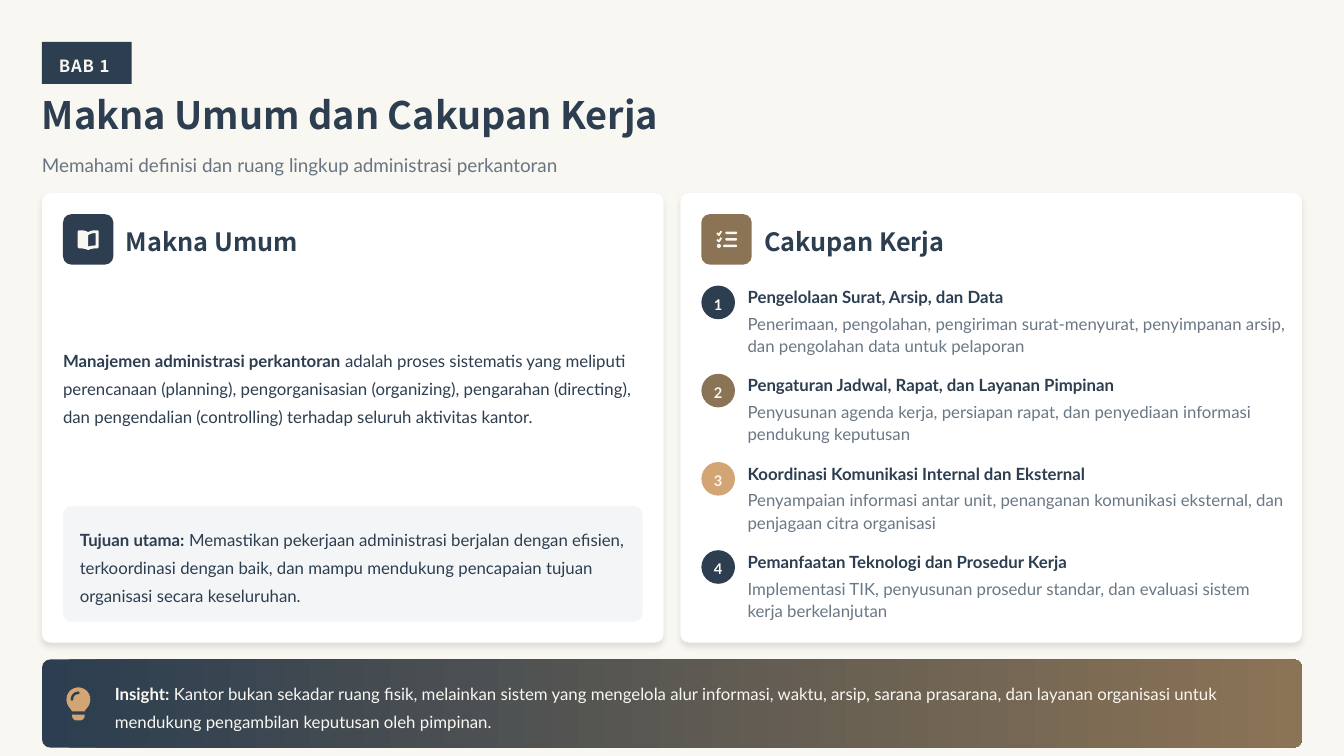
"""Build the slide on the general meaning and scope of office administration."""
from dataclasses import dataclass

from lxml import etree
from pptx import Presentation
from pptx.dml.color import RGBColor
from pptx.enum.shapes import MSO_SHAPE
from pptx.enum.text import MSO_ANCHOR, PP_ALIGN
from pptx.oxml.ns import qn
from pptx.util import Pt

RECT, ROUND, OVAL = MSO_SHAPE.RECTANGLE, MSO_SHAPE.ROUNDED_RECTANGLE, MSO_SHAPE.OVAL
MIDDLE, LEFT, CENTER = MSO_ANCHOR.MIDDLE, PP_ALIGN.LEFT, PP_ALIGN.CENTER


@dataclass(frozen=True)
class Theme:
    navy: str = "2C3E50"
    brown: str = "8B7355"
    tan: str = "D4A574"
    cream: str = "F8F7F2"
    white: str = "FFFFFF"
    head_font: str = "Noto Sans CJK SC"
    body_font: str = "Lato"
    title: float = 27
    heading: float = 18
    subtitle: float = 13.5
    body: float = 12
    badge: float = 10.5


T = Theme()

TAG = "BAB 1"
TITLE = "Makna Umum dan Cakupan Kerja"
SUBTITLE = "Memahami definisi dan ruang lingkup administrasi perkantoran"
MEANING = [
    ("Manajemen administrasi perkantoran", True),
    (" adalah proses sistematis yang meliputi perencanaan (planning), pengorganisasian (organizing), "
     "pengarahan (directing), dan pengendalian (controlling) terhadap seluruh aktivitas kantor.", False),
]
GOAL = [
    ("Tujuan utama:", True),
    (" Memastikan pekerjaan administrasi berjalan dengan efisien, terkoordinasi dengan baik, "
     "dan mampu mendukung pencapaian tujuan organisasi secara keseluruhan.", False),
]
INSIGHT = [
    ("Insight:", True),
    (" Kantor bukan sekadar ruang fisik, melainkan sistem yang mengelola alur informasi, waktu, arsip, "
     "sarana prasarana, dan layanan organisasi untuk mendukung pengambilan keputusan oleh pimpinan.", False),
]
SCOPE = [
    ("Pengelolaan Surat, Arsip, dan Data",
     "Penerimaan, pengolahan, pengiriman surat-menyurat, penyimpanan arsip, "
     "dan pengolahan data untuk pelaporan", T.navy),
    ("Pengaturan Jadwal, Rapat, dan Layanan Pimpinan",
     "Penyusunan agenda kerja, persiapan rapat, dan penyediaan informasi pendukung keputusan", T.brown),
    ("Koordinasi Komunikasi Internal dan Eksternal",
     "Penyampaian informasi antar unit, penanganan komunikasi eksternal, "
     "dan penjagaan citra organisasi", T.tan),
    ("Pemanfaatan Teknologi dan Prosedur Kerja",
     "Implementasi TIK, penyusunan prosedur standar, dan evaluasi sistem kerja berkelanjutan", T.navy),
]
BOOK = (
    "M 6.8 2 L 7.5 2.3 L 8.2 2 C 9.6 1.3 11.2 1 12.8 1 L 13.6 1 C 14.4 1 15 1.5 15 2.3 L 15 12.7 "
    "C 15 13.4 14.4 14 13.6 14 L 12.8 14 C 11 14 9.4 14.3 7.9 15 L 7.1 15 C 5.6 14.3 4 14 2.2 14 "
    "L 1.4 14 C 0.6 14 0 13.4 0 12.7 L 0 2.3 C 0 1.5 0.6 1 1.4 1 L 2.2 1 C 3.8 1 5.4 1.3 6.8 2 "
    "M 7.5 4.5 L 7.5 12.7 C 9.1 12.1 10.8 11.9 12.8 11.9 L 12.8 3 C 10.8 3 9 3.4 7.5 4.5"
)
CHECKLIST = (
    "M 3.2 1.3 L 4.3 2 L 2.4 5 L 1.7 5 L 0.2 3.5 L 1 2.5 L 1.9 3.3 L 3.2 1.3 "
    "M 3.2 6 L 4.3 6.7 L 2.4 9.7 L 1.7 9.7 L 0.2 8.2 L 1 7.2 L 1.9 8 L 3.2 6 "
    "M 7.5 1.9 L 14 1.9 C 15.3 1.9 15.3 3.7 14 3.7 L 7.5 3.7 C 6.3 3.7 6.3 1.9 7.5 1.9 "
    "M 7.5 6.6 L 14 6.6 C 15.3 6.6 15.3 8.4 14 8.4 L 7.5 8.4 C 6.3 8.4 6.3 6.6 7.5 6.6 "
    "M 6 11.3 L 14 11.3 C 15.3 11.3 15.3 13.1 14 13.1 L 6 13.1 C 4.7 13.1 4.7 11.3 6 11.3 "
    "M 2 10.8 C 3.9 10.8 3.9 13.6 2 13.6 C 0.1 13.6 0.1 10.8 2 10.8"
)
BULB = (
    "M 13 17.2 C 13.3 16.2 14.2 15.3 15 14.3 C 16.2 12.7 17 10.8 17 8.6 C 17 3.9 13.2 0 8.5 0 "
    "C 3.8 0 0 3.9 0 8.6 C 0 10.8 0.8 12.7 2 14.3 C 2.8 15.3 3.7 16.2 4 17.2 L 13 17.2 "
    "M 13 19.4 L 4 19.4 L 4 20.2 C 4 22.1 5.5 23.6 7.5 23.6 L 9.5 23.6 C 11.5 23.6 13 22.1 13 20.2 L 13 19.4 "
    "M 8.5 4.9 C 6.3 4.9 4.9 6.5 4.9 8.6 C 4.9 9.9 3 9.9 3 8.6 C 3 5.3 5.4 2.9 8.5 2.9 "
    "C 9.7 2.9 9.7 4.9 8.5 4.9"
)
CARDS = [("Makna Umum", T.navy, BOOK), ("Cakupan Kerja", T.brown, CHECKLIST)]

MARGIN, PAD, RADIUS = 30, 15, 6
CARD_TOP, CARD_W, CARD_H, CARD_GAP = 138, 444, 321, 12
ICON_BOX, ICON, BADGE = 36, 15, 24
ITEM_TOP, ITEM_PITCH = 201, 63
BAR_TOP, BAR_H = 471, 63


def set_alpha(element, percent):
    for color in element.iter(qn("a:srgbClr")):
        etree.SubElement(color, qn("a:alpha")).set("val", str(percent * 1000))


def paint(sp, color):
    sp.shadow.inherit = False
    sp.line.fill.background()
    sp.fill.solid()
    sp.fill.fore_color.rgb = RGBColor.from_string(color)


def block(s, kind, x, y, w, h, color):
    sp = s.shapes.add_shape(kind, Pt(x), Pt(y), Pt(w), Pt(h))
    if kind == ROUND:
        sp.adjustments[0] = RADIUS / min(w, h)
    paint(sp, color)
    return sp


def write(sp, runs, size, color, spacing, font=T.body_font, align=LEFT, alpha=None):
    tf = sp.text_frame
    tf.word_wrap, tf.vertical_anchor = True, MIDDLE
    tf.margin_left = tf.margin_right = tf.margin_top = tf.margin_bottom = 0
    p = tf.paragraphs[0]
    p.alignment, p.line_spacing = align, spacing
    p.font.size, p.font.name = Pt(size), font
    p.font.color.rgb = RGBColor.from_string(color)
    if alpha:
        set_alpha(p._p, alpha)
    for content, bold in runs:
        r = p.add_run()
        r.text, r.font.bold = content, bold
    return p


def text(s, x, y, w, h, *args, **kwargs):
    return write(s.shapes.add_textbox(Pt(x), Pt(y), Pt(w), Pt(h)), *args, **kwargs)


def flatten(outline, steps=8):
    """Yield (starts_contour, x, y) along a path of M, L and C commands."""
    tokens = iter(outline.split())
    x = y = 0
    for command in tokens:
        n = 6 if command == "C" else 2
        v = [float(next(tokens)) for _ in range(n)]
        if command == "C":
            for t in (i / steps for i in range(1, steps + 1)):
                k = ((1 - t) ** 3, 3 * t * (1 - t) ** 2, 3 * t * t * (1 - t), t ** 3)
                yield (False, sum(a * b for a, b in zip(k, [x] + v[0::2])),
                       sum(a * b for a, b in zip(k, [y] + v[1::2])))
        else:
            yield command == "M", v[0], v[1]
        x, y = v[-2:]


def icon(s, outline, x, y, color):
    points = [(start, Pt(x + px), Pt(y + py)) for start, px, py in flatten(outline)]
    builder = s.shapes.build_freeform(points[0][1], points[0][2], scale=1.0)
    for start, px, py in points[1:]:
        if start:
            builder.move_to(px, py)
        else:
            builder.add_line_segments([(px, py)], close=False)
    paint(builder.convert_to_shape(), color)


def card(s, x, heading, color, outline):
    sp = block(s, ROUND, x, CARD_TOP, CARD_W, CARD_H, T.white)
    shadow = etree.SubElement(sp._element.spPr.find(qn("a:effectLst")), qn("a:outerShdw"),
                              blurRad=str(Pt(4.5)), dist=str(Pt(3)), dir="5400000", rotWithShape="0")
    etree.SubElement(shadow, qn("a:srgbClr")).set("val", "000000")
    set_alpha(shadow, 10)
    left, top, inset = x + PAD, CARD_TOP + PAD, (ICON_BOX - ICON) / 2
    block(s, ROUND, left, top, ICON_BOX, ICON_BOX, color)
    icon(s, outline, left + inset, top + inset, T.cream)
    text(s, left + ICON_BOX + 9, top + 6, 144, 24, [(heading, True)], T.heading, T.navy, 1.1, T.head_font)


def main():
    prs = Presentation()
    prs.slide_width, prs.slide_height = Pt(960), Pt(540)
    s = prs.slides.add_slide(prs.slide_layouts[6])
    s.background.fill.solid()
    s.background.fill.fore_color.rgb = RGBColor.from_string(T.cream)

    block(s, RECT, MARGIN, 30, 64, 30, T.navy)
    p = text(s, MARGIN + 12, 30, 46, 30, [(TAG, True)], T.body, T.cream, 1.3, T.head_font)
    p.runs[0]._r.get_or_add_rPr().set("spc", "60")
    text(s, MARGIN, 69, 900, 30, [(TITLE, True)], T.title, T.navy, 0.9, T.head_font)
    text(s, MARGIN, 105, 900, 21, [(SUBTITLE, False)], T.subtitle, T.navy, 1.3, alpha=70)

    for i, content in enumerate(CARDS):
        card(s, MARGIN + i * (CARD_W + CARD_GAP), *content)

    left = MARGIN + PAD
    text(s, left, ITEM_TOP, 420, 148, MEANING, T.body, T.navy, 1.4)
    goal = block(s, ROUND, left, 361.5, CARD_W - 2 * PAD, 82.5, T.navy)
    set_alpha(goal._element.spPr, 5)
    text(s, left + 12, 373.5, 396, 58.5, GOAL, T.body, T.navy, 1.4)

    left += CARD_W + CARD_GAP
    for i, (name, detail, color) in enumerate(SCOPE):
        y = ITEM_TOP + i * ITEM_PITCH
        badge = block(s, OVAL, left, y + 3, BADGE, BADGE, color)
        write(badge, [(str(i + 1), True)], T.badge, T.cream, 1.2, align=CENTER)
        text(s, left + 33, y, 387, 18, [(name, True)], T.body, T.navy, 1.3)
        text(s, left + 33, y + 21, 387, 33, [(detail, False)], T.body, T.navy, 1.1, alpha=70)

    bar = block(s, ROUND, MARGIN, BAR_TOP, 900, BAR_H, T.navy)
    bar.fill.gradient()
    bar.fill.gradient_angle = 0
    for stop, color in zip(bar.fill.gradient_stops, (T.navy, T.brown)):
        stop.color.rgb = RGBColor.from_string(color)
    icon(s, BULB, 47.5, BAR_TOP + 20, T.tan)
    text(s, 82, BAR_TOP + 12, 842, 39, INSIGHT, T.body, T.cream, 1.4)
    prs.save("out.pptx")


if __name__ == "__main__":
    main()
